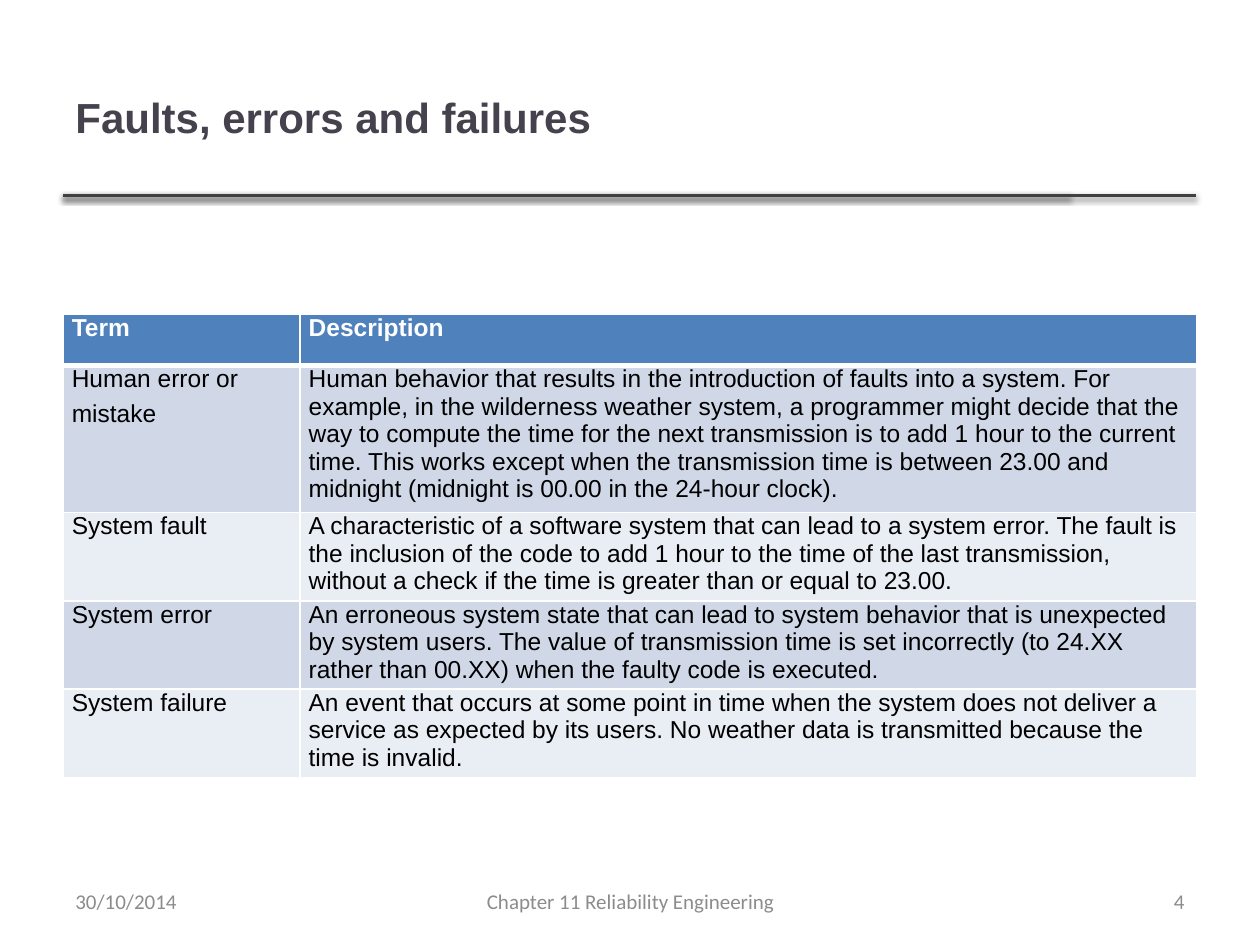
"""Build the slide that defines faults, errors and failures."""
from lxml import etree
from pptx import Presentation, oxml, util as u
from pptx.dml.color import RGBColor
from pptx.enum import shapes, text
from pptx.oxml import ns

TITLE = "Faults, errors and failures"
ROWS = [
    ("Term", "Description"),
    ("Human error or\nmistake",
     "Human behavior that results in the introduction of faults into a system. "
     "For example, in the wilderness weather system, a programmer might decide "
     "that the way to compute the time for the next transmission is to add 1 hour "
     "to the current time. This works except when the transmission time is between "
     "23.00 and midnight (midnight is 00.00 in the 24-hour clock)."),
    ("System fault",
     "A characteristic of a software system that can lead to a system error. The "
     "fault is the inclusion of the code to add 1 hour to the time of the last "
     "transmission, without a check if the time is greater than or equal to 23.00."),
    ("System error",
     "An erroneous system state that can lead to system behavior that is unexpected "
     "by system users. The value of transmission time is set incorrectly (to 24.XX "
     "rather than 00.XX) when the faulty code is executed."),
    ("System failure",
     "An event that occurs at some point in time when the system does not deliver a "
     "service as expected by its users. No weather data is transmitted because the "
     "time is invalid."),
]
A = text.PP_ALIGN
FOOT = [
    ("4", (7.17, 6.95, 2.33, 0.4), A.RIGHT),
    ("Chapter 11 Reliability Engineering", (3.42, 6.95, 3.17, 0.4), A.CENTER),
    ("30/10/2014", (0.5, 6.95, 2.33, 0.4), A.LEFT),
]
WIDTHS = (1.88, 7.12)
HEAD, BANDS = "4F81BD", ("D0D8E8", "E9EDF4")
HEAD_FONT = {"name": "Arial", "size": u.Pt(14), "bold": True, "color": "FFFFFF"}
BODY_FONT = {**HEAD_FONT, "bold": False, "color": "000000"}
TITLE_FONT = {**HEAD_FONT, "size": u.Pt(24), "color": "46424D"}
FOOT_FONT = {"name": "Calibri", "size": u.Pt(12), "bold": False, "color": "8C8C8C"}
PAD = {"margin_left": 0.07, "margin_right": 0.07, "margin_top": 0, "margin_bottom": 0}
SHADOW = (
    f'<a:effectLst {ns.nsdecls("a")}><a:outerShdw blurRad="{u.Pt(3.1)}" '
    f'dist="{u.Pt(1.6)}" dir="5400000" rotWithShape="0"><a:srgbClr val="000000">'
    '<a:alpha val="38000"/></a:srgbClr></a:outerShdw></a:effectLst>')


def paint(fill, tint):
    fill.solid()
    fill.fore_color.rgb = RGBColor.from_string(tint)


def style(font, form):
    for key, val in form.items():
        if key == "color":
            paint(font.fill, val)
        else:
            setattr(font, key, val)


def write(frame, words, form, align=A.LEFT, after=0):
    frame.text = words
    for para in frame.paragraphs:
        para.alignment = align
        para.space_after = u.Pt(after)
        style(para.runs[0].font, form)


def label(slide, words, box, form, align=A.LEFT):
    frame = slide.shapes.add_textbox(*map(u.Inches, box)).text_frame
    frame.word_wrap = True
    frame.vertical_anchor = text.MSO_ANCHOR.MIDDLE
    write(frame, words, form, align)


def rule(slide, end):
    ends = map(u.Inches, (0.5, 1.55, end, 1.55))
    line = slide.shapes.add_connector(shapes.MSO_CONNECTOR.STRAIGHT, *ends)
    line.line.width = u.Pt(2)
    paint(line.line.fill, "404040")
    line._element.spPr.append(oxml.parse_xml(SHADOW))


def border(cell, sides):
    props = cell._tc.get_or_add_tcPr()
    for side, size in sides.items():
        edge = etree.SubElement(props, ns.qn(f"a:ln{side}"), w=str(u.Pt(size)))
        fill = etree.SubElement(edge, ns.qn("a:solidFill"))
        etree.SubElement(fill, ns.qn("a:srgbClr"), val="FFFFFF")


def grid(slide):
    box = map(u.Inches, (0.5, 2.49, sum(WIDTHS), 3.67))
    frame = slide.shapes.add_table(len(ROWS), len(WIDTHS), *box)
    table = frame.table
    for col, wide in zip(table.columns, WIDTHS):
        col.width = u.Inches(wide)
    for r, row in enumerate(ROWS):
        table.rows[r].height = u.Inches(0.41)
        for c, words in enumerate(row):
            cell = table.cell(r, c)
            for key, val in PAD.items():
                setattr(cell, key, u.Inches(val))
            border(cell, {"L": 1, "R": 1, "T": 3 if r == 1 else 1, "B": 1 if r else 3})
            paint(cell.fill, BANDS[(r - 1) % 2] if r else HEAD)
            after = 4 if r > 1 or (r, c) == (1, 0) else 0
            write(cell.text_frame, words, BODY_FONT if r else HEAD_FONT, after=after)
    frame.height = u.Inches(3.67)


def main():
    deck = Presentation()
    deck.slide_width, deck.slide_height = u.Inches(10), u.Inches(7.5)
    slide = deck.slides.add_slide(deck.slide_layouts[6])
    for end in (8.49, 9.49):
        rule(slide, end)
    label(slide, TITLE, (0.5, 0.3, 7.98, 1.25), TITLE_FONT)
    grid(slide)
    for words, box, align in FOOT:
        label(slide, words, box, FOOT_FONT, align)
    deck.save("out.pptx")


if __name__ == "__main__":
    main()
